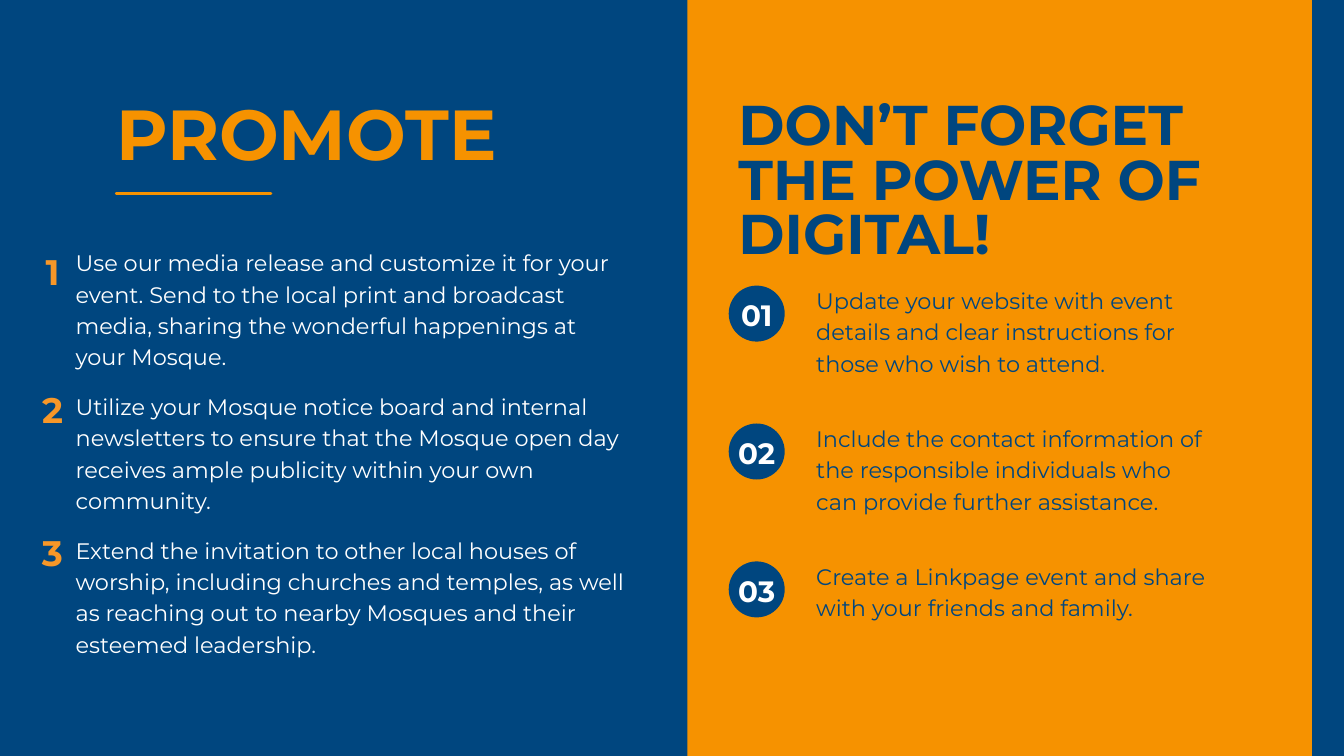
from pptx import Presentation
from pptx.dml.color import RGBColor
from pptx.enum.shapes import MSO_CONNECTOR, MSO_SHAPE
from pptx.enum.text import MSO_ANCHOR, MSO_AUTO_SIZE, PP_ALIGN
from pptx.oxml.ns import qn
from pptx.util import Pt
from lxml.etree import SubElement

PX = 9525  # 96 px to the inch
BLUE = RGBColor(0x00, 0x46, 0x7F)
GOLD = RGBColor(0xF6, 0x92, 0x00)
AMBER = RGBColor(0xF7, 0x97, 0x28)
WHITE = RGBColor(0xFF, 0xFF, 0xFF)

HEAD = {"name": "Montserrat", "size": Pt(75.8), "bold": True}
SIDE = {**HEAD, "size": Pt(60)}
MARK = {**HEAD, "size": Pt(38)}
DISC = {**HEAD, "size": Pt(31.5)}
BODY = {"name": "Montserrat", "size": Pt(24), "bold": False}


def place(shape, left, top, width, height):
    box = {"left": left, "top": top, "width": width, "height": height}
    for name, value in box.items():
        setattr(shape, name, value * PX)


def write(shape, lines, look, color, pitch, align=PP_ALIGN.LEFT, gaps=None):
    frame = shape.text_frame
    setup = {"margin_left": 0, "margin_top": 0, "margin_right": 0, "margin_bottom": 0,
             "word_wrap": True, "auto_size": MSO_AUTO_SIZE.NONE,
             "vertical_anchor": MSO_ANCHOR.TOP}
    for name, value in setup.items():
        setattr(frame, name, value)
    frame.text = "\n".join(lines)
    for para, gap in zip(frame.paragraphs, gaps or [0] * len(lines)):
        para.alignment = align
        para.line_spacing = Pt(pitch)
        para.space_before = Pt(gap)
        for name, value in look.items():
            setattr(para.runs[0].font, name, value)
        para.runs[0].font.color.rgb = color


deck = Presentation()
deck.slide_width, deck.slide_height = 1920 * PX, 1080 * PX
slide = deck.slides.add_slide(deck.slide_layouts[1])
shapes = slide.shapes
title, body = slide.placeholders

# Background and right panel
slide.background.fill.solid()
slide.background.fill.fore_color.rgb = BLUE
panel = shapes.add_shape(MSO_SHAPE.RECTANGLE, 982 * PX, 0, 892 * PX, 1080 * PX)
panel.shadow.inherit = False
panel.fill.solid()
panel.fill.fore_color.rgb = GOLD
panel.line.fill.background()

# Left heading with its rule
place(title, 166, 151, 712, 104)
write(title, ["PROMOTE"], HEAD, GOLD, 73.5)
rule = shapes.add_connector(MSO_CONNECTOR.STRAIGHT, 166 * PX, 277 * PX, 387 * PX, 277 * PX)
rule.line.color.rgb = GOLD
rule.line.width = Pt(3)
rule.line._get_or_add_ln().set("cap", "rnd")
SubElement(rule._element.spPr, qn("a:effectLst"))

# Left list
steps = [
    "Use our media release and customize it for your event. Send to the local print "
    "and broadcast media, sharing the wonderful happenings at your Mosque.",
    "Utilize your Mosque notice board and internal newsletters to ensure that the "
    "Mosque open day receives ample publicity within your own community.",
    "Extend the invitation to other local houses of worship, including churches and "
    "temples, as well as reaching out to nearby Mosques and their esteemed leadership.",
]
place(body, 108, 350, 794, 578)
write(body, steps, BODY, WHITE, 33.6, gaps=[0, 19.6, 19.6])
for para in body.text_frame.paragraphs:
    props = para._p.get_or_add_pPr()
    props.set("marL", "0")
    props.set("indent", "0")
    SubElement(props, qn("a:buNone"))

# Numbers beside the list
marks = shapes.add_textbox(0, 0, 0, 0)
place(marks, 60, 347, 30, 466)
write(marks, ["1", "2", "3"], MARK, AMBER, 53.2, PP_ALIGN.CENTER, [0, 95.2, 99.4])

# Right heading
side = shapes.add_textbox(0, 0, 0, 0)
place(side, 1055, 147, 747, 235)
write(side, ["DON’T FORGET THE POWER OF DIGITAL!"], SIDE, BLUE, 58.2)

# Numbered discs with their tips
tips = [
    "Update your website with event details and clear instructions for those who wish to attend.",
    "Include the contact information of the responsible individuals who can provide further assistance.",
    "Create a Linkpage event and share with your friends and family.",
]
for row, tip in enumerate(tips):
    top = 408 + 197 * row
    disc = shapes.add_shape(MSO_SHAPE.OVAL, 1041 * PX, top * PX, 80 * PX, 80 * PX)
    disc.shadow.inherit = False
    disc.fill.solid()
    disc.fill.fore_color.rgb = BLUE
    disc.line.fill.background()
    write(disc, [f"{row + 1:02}"], DISC, WHITE, 44.1, PP_ALIGN.CENTER)
    disc.text_frame.word_wrap = False
    disc.text_frame.vertical_anchor = MSO_ANCHOR.MIDDLE
    disc.text_frame.margin_bottom = 4 * PX

    note = shapes.add_textbox(0, 0, 0, 0)
    place(note, 1166, top - 4, 564, 130)
    write(note, [tip], BODY, BLUE, 33.6)

deck.save("out.pptx")
